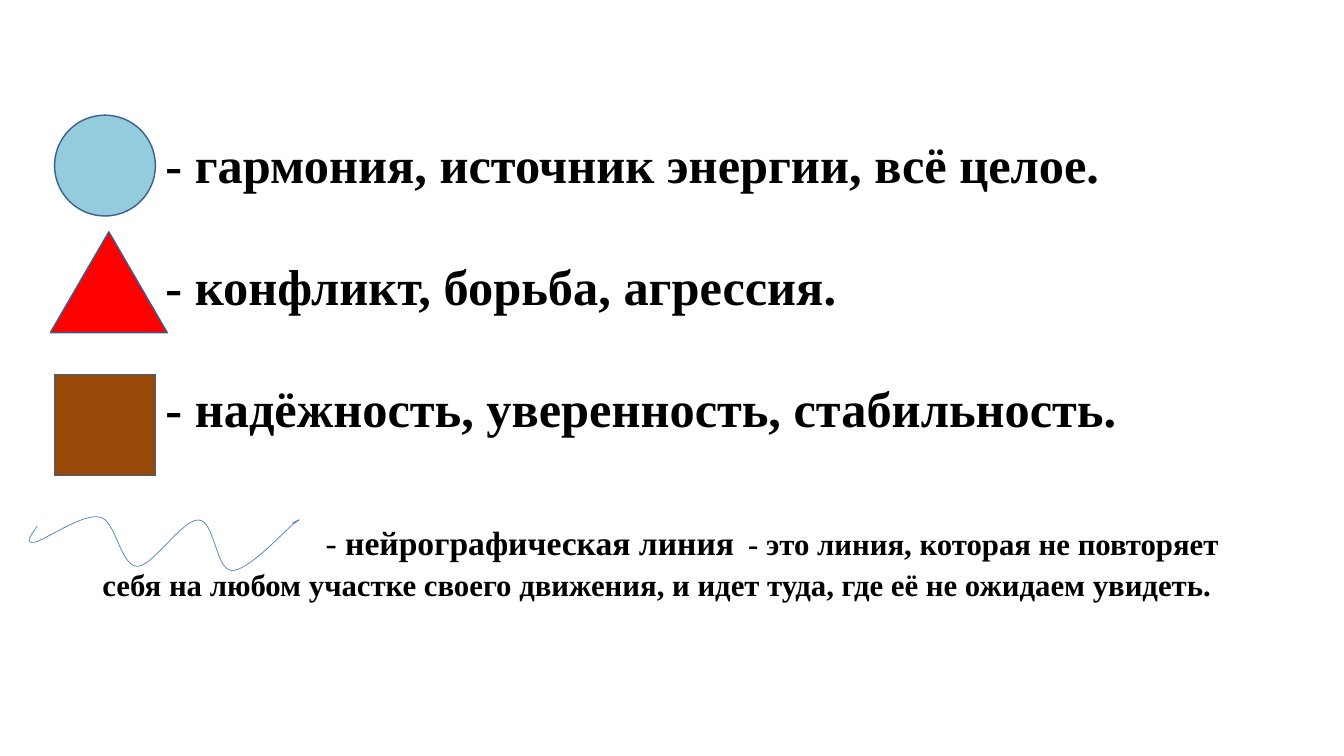
from pptx import Presentation
from pptx.dml.color import RGBColor
from pptx.enum import shapes, text
from pptx.util import Pt

THEME = {
    "font": "Times New Roman",
    "ink": "000000", "edge": "3A5F8C", "wave": "4F81BD",
    "circle": "93CDDD", "triangle": "FF0000", "square": "984807",
    "large": 36, "term": 24, "small": 22,
}
KIND = shapes.MSO_SHAPE
MEANINGS = [
    "- гармония, источник энергии, всё целое.",
    "- конфликт, борьба, агрессия.",
    "- надёжность, уверенность, стабильность.",
]
DEFINITION = [
    ("- ", "term", False, 0),
    ("нейрографическая линия", "term", True, 0),
    (" ", "term", False, 400),
    ("- это линия, которая не повторяет себя на любом участке своего движения, "
     "и идет туда, где её не ожидаем увидеть.", "small", True, 0),
]
FIGURES = [
    (KIND.ISOSCELES_TRIANGLE, "triangle", 36, 165.6, 83.5),
    (KIND.OVAL, "circle", 39, 82.3, 72),
    (KIND.RECTANGLE, "square", 39, 267.6, 72),
]
SIDE = 72
START = (26.6, 375.8)
CURVES = [
    ((22.3, 382.3), (17.3, 388.1), (24.5, 387.4)),
    ((32.4, 385.9), (59, 366.5), (71.3, 369.4)),
    ((82.8, 371.5), (85.7, 403.9), (97.9, 404.6)),
    ((109.4, 404.6), (130.3, 370.8), (141.8, 371.5)),
    ((153.4, 371.5), (154.1, 407.5), (165.6, 407.5)),
    ((177.1, 408.2), (202.3, 380.2), (209.5, 374.4)),
    ((216.7, 369.4), (213.1, 371.5), (208.8, 373.7)),
]
STEPS = 16


def color(name):
    return RGBColor.from_string(THEME[name])


def style(run, size, bold):
    run.font.name = THEME["font"]
    run.font.size = Pt(THEME[size])
    run.font.bold = bold
    run.font.color.rgb = color("ink")


def indent(para, left, first):
    props = para._p.get_or_add_pPr()
    props.set("marL", str(Pt(left)))
    props.set("indent", str(Pt(first)))
    para.alignment = text.PP_ALIGN.LEFT


def write(slide):
    title = slide.shapes.title
    title.left, title.top, title.width, title.height = map(Pt, (66, 0, 828, 540))
    frame = title.text_frame
    frame.word_wrap = True
    frame.auto_size = text.MSO_AUTO_SIZE.NONE
    frame.vertical_anchor = text.MSO_ANCHOR.TOP
    frame.margin_top, frame.margin_bottom = Pt(100.2), 0
    frame.margin_left = frame.margin_right = Pt(7.2)
    frame.text = "\n".join(MEANINGS)
    for i, para in enumerate(frame.paragraphs):
        indent(para, 45, 0)
        para.line_spacing = 0.9
        para.space_before = Pt(48 if i else 0)
        style(para.runs[0], "large", True)
    para = frame.add_paragraph()
    indent(para, 0, 159.4)
    para.line_spacing = Pt(28.6)
    para.space_before = Pt(60.3)
    for words, size, bold, gap in DEFINITION:
        run = para.add_run()
        run.text = words
        style(run, size, bold)
        if gap:
            run._r.get_or_add_rPr().set("spc", str(gap))


def draw(slide):
    for kind, fill, left, top, width in FIGURES:
        shape = slide.shapes.add_shape(kind, Pt(left), Pt(top), Pt(width), Pt(SIDE))
        shape.shadow.inherit = False
        shape.fill.solid()
        shape.fill.fore_color.rgb = color(fill)
        shape.line.color.rgb = color("edge")
        shape.line.width = Pt(1)


def bezier(a, b, c, d, t):
    s = 1 - t
    return tuple(
        Pt(s**3 * p + 3 * s * s * t * q + 3 * s * t * t * r + t**3 * e)
        for p, q, r, e in zip(a, b, c, d)
    )


def wave(slide):
    points, last = [], START
    for curve in CURVES:
        points += [bezier(last, *curve, n / STEPS) for n in range(1, STEPS + 1)]
        last = curve[-1]
    pen = slide.shapes.build_freeform(*map(Pt, START))
    pen.add_line_segments(points, close=False)
    line = pen.convert_to_shape()
    line.shadow.inherit = False
    line.fill.background()
    line.line.color.rgb = color("wave")
    line.line.width = Pt(0.5)


def main():
    deck = Presentation()
    deck.slide_width, deck.slide_height = Pt(960), Pt(540)
    slide = deck.slides.add_slide(deck.slide_layouts[5])
    write(slide)
    draw(slide)
    wave(slide)
    deck.save("out.pptx")


if __name__ == "__main__":
    main()
